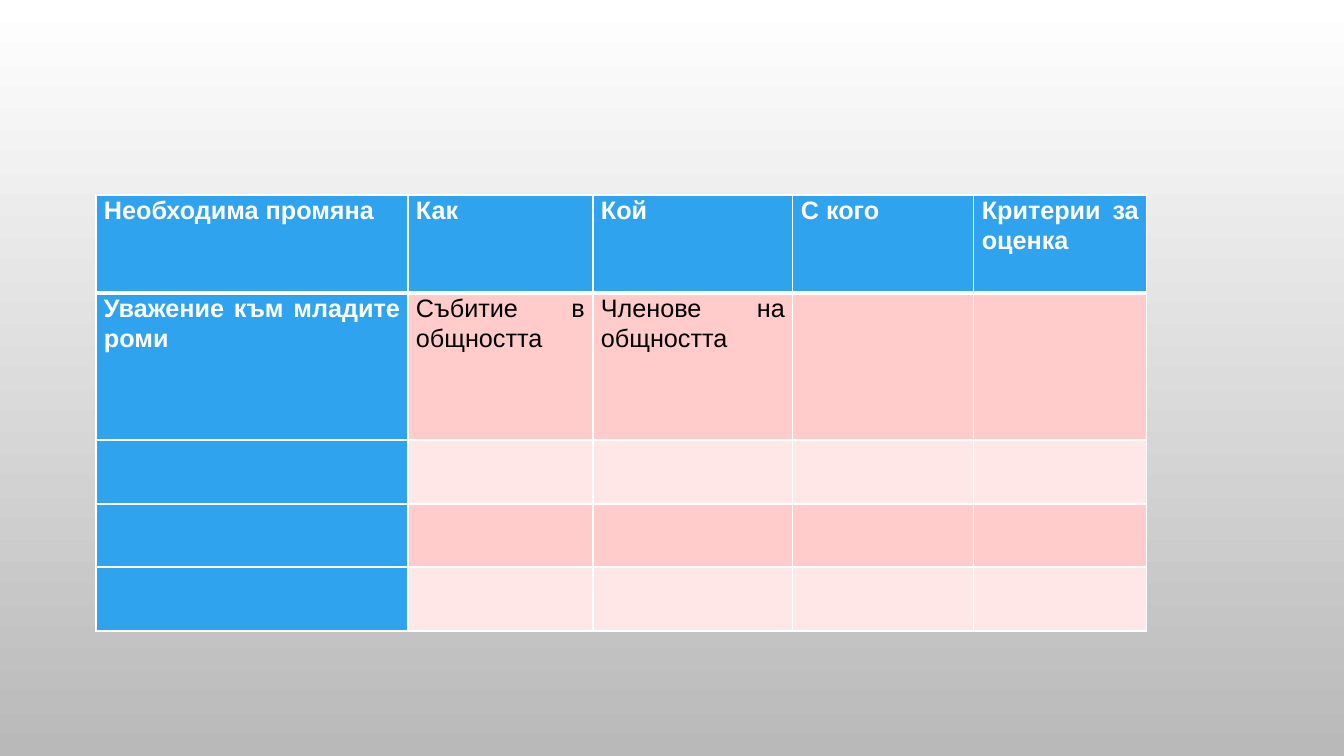
from lxml import etree
from pptx import Presentation
from pptx.dml.color import RGBColor
from pptx.enum.text import PP_ALIGN
from pptx.oxml.ns import qn
from pptx.util import Pt

JUSTIFY = PP_ALIGN.JUSTIFY
EMU_PER_PX = 12192000 / 1344
SIDES = ("L", "R", "T", "B")

COLUMN_WIDTHS = (312, 185, 200, 181, 173)
ROW_HEIGHTS = (98, 147, 64, 63, 64)
ACTION_PLAN = (
    ("Необходима промяна", "Как", "Кой", "С кого", "Критерии за оценка"),
    ("Уважение към младите роми", "Събитие в общността", "Членове на общността"),
)


def px(length):
    return round(length * EMU_PER_PX)


def color(value):
    return RGBColor.from_string(value)


class SlideBuilder:
    font_name = "Arial"
    font_size = 18
    white = "FFFFFF"
    black = "000000"
    accent = "2FA3EE"
    bands = ("FFE7E7", "FFCBCB")

    def __init__(self, deck):
        self.slide = deck.slides.add_slide(deck.slide_layouts[6])

    def gradient_background(self, start, end):
        fill = self.slide.background.fill
        fill.gradient()
        fill.gradient_angle = 270
        for stop, value in zip(fill.gradient_stops, (start, end)):
            stop.color.rgb = color(value)

    def borders(self, cell, widths):
        properties = cell._tc.get_or_add_tcPr()
        for side, width in zip(SIDES, widths):
            line = etree.SubElement(properties, qn(f"a:ln{side}"), w=str(Pt(width)))
            fill = etree.SubElement(line, qn("a:solidFill"))
            etree.SubElement(fill, qn("a:srgbClr"), val=self.white)

    def cell_text(self, cell, text, heading):
        para = cell.text_frame.paragraphs[0]
        para.alignment = JUSTIFY
        para.line_spacing = 1.07
        span = para.add_run()
        span.text = text
        span.font.name = self.font_name
        span.font.size = Pt(self.font_size)
        span.font.bold = heading
        span.font.color.rgb = color(self.white if heading else self.black)

    def table(self, left, top, widths, heights, rows):
        frame = self.slide.shapes.add_table(
            len(heights), len(widths), px(left), px(top), px(sum(widths)), px(sum(heights))
        )
        table = frame.table
        for column, width in zip(table.columns, widths):
            column.width = px(width)
        for row_index, height in enumerate(heights):
            table.rows[row_index].height = px(height)
            texts = rows[row_index] if row_index < len(rows) else ()
            for column_index in range(len(widths)):
                cell = table.cell(row_index, column_index)
                heading = row_index == 0 or column_index == 0
                cell.margin_left = cell.margin_right = px(8)
                cell.margin_top = cell.margin_bottom = 0
                self.borders(cell, (1, 1, 3 if row_index == 1 else 1, 3 if row_index == 0 else 1))
                cell.fill.solid()
                cell.fill.fore_color.rgb = color(self.accent if heading else self.bands[row_index % 2])
                if column_index < len(texts):
                    self.cell_text(cell, texts[column_index], heading)


def main():
    deck = Presentation()
    deck.slide_width = px(1344)
    deck.slide_height = px(756)
    page = SlideBuilder(deck)
    page.gradient_background("FFFFFF", "B9B9B9")
    page.table(96, 195, COLUMN_WIDTHS, ROW_HEIGHTS, ACTION_PLAN)
    deck.save("out.pptx")


if __name__ == "__main__":
    main()
